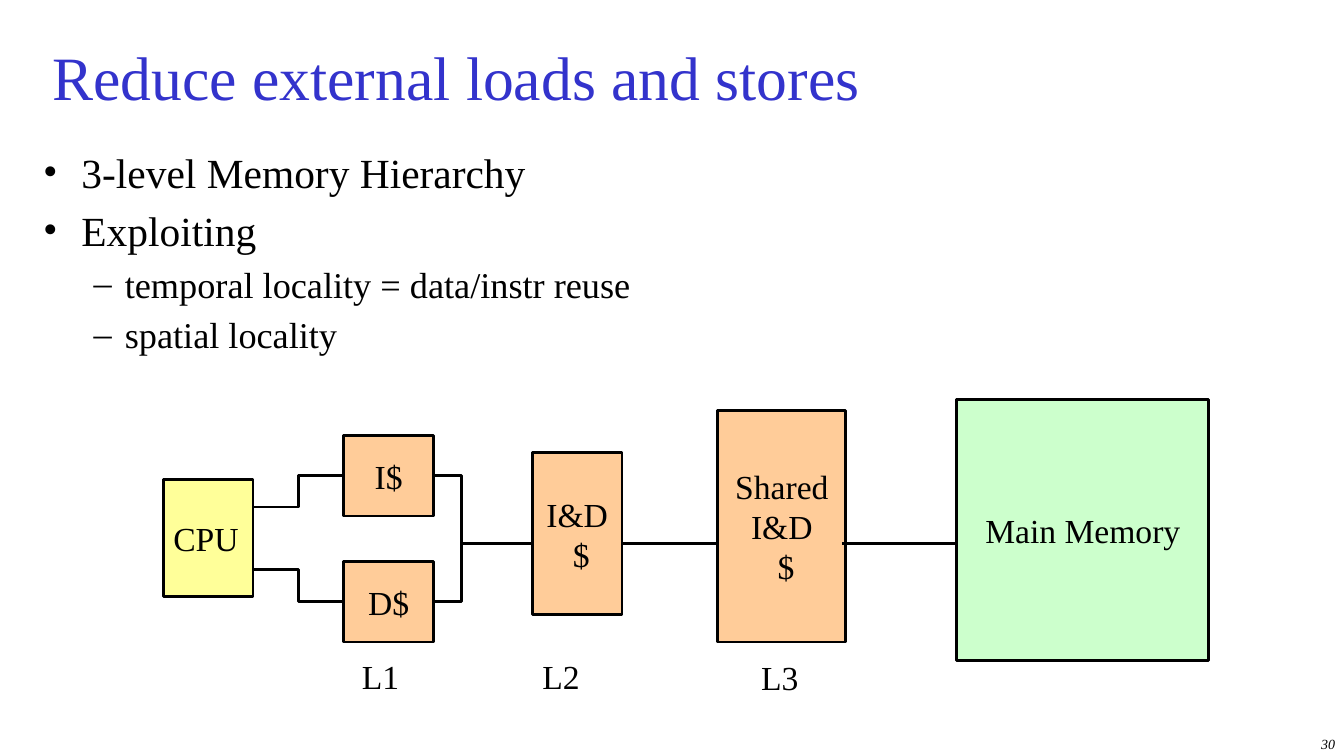
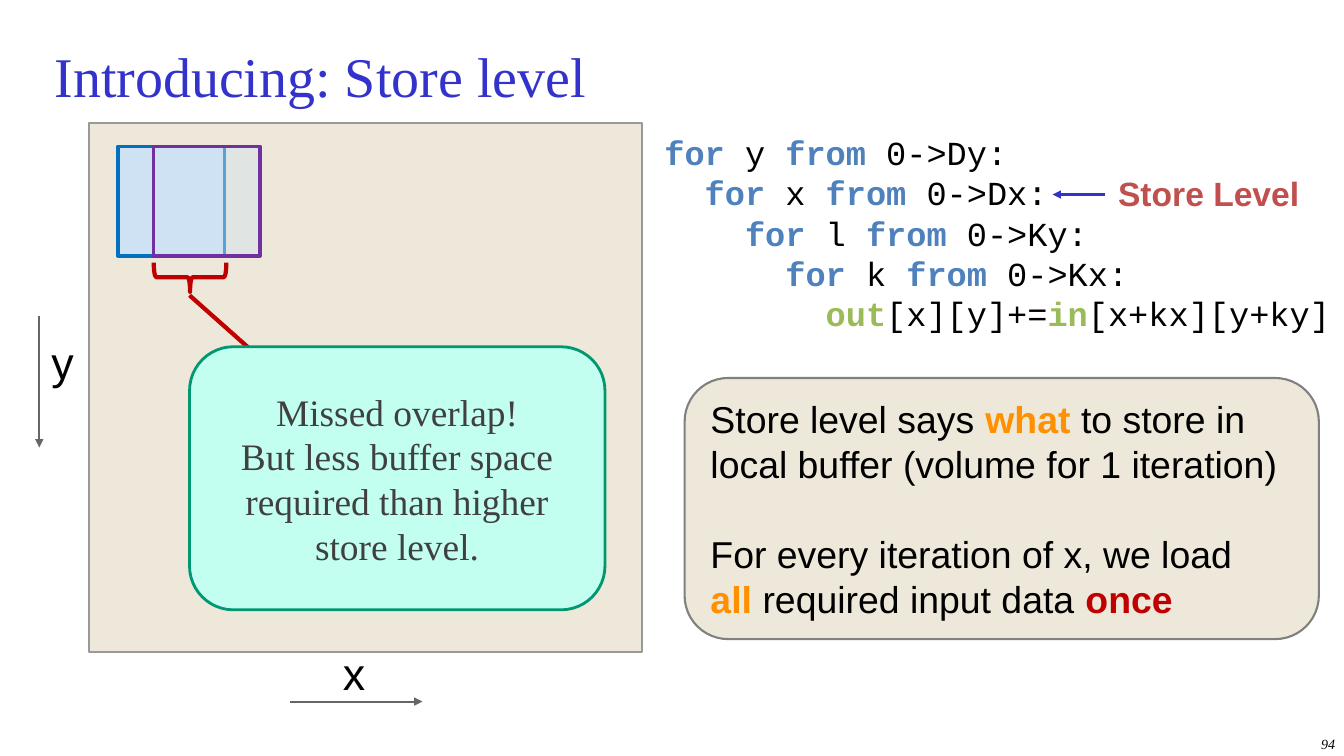
import pptx
import pptx.dml.color
import pptx.enum.shapes
import pptx.enum.text
import pptx.oxml.ns
import pptx.util
from lxml import etree

Inches = pptx.util.Inches
Pt = pptx.util.Pt
RGBColor = pptx.dml.color.RGBColor
SHAPE = pptx.enum.shapes.MSO_SHAPE
CONNECTOR = pptx.enum.shapes.MSO_CONNECTOR
ALIGN = pptx.enum.text.PP_ALIGN
ANCHOR = pptx.enum.text.MSO_ANCHOR
qn = pptx.oxml.ns.qn

BLACK = RGBColor(0x00, 0x00, 0x00)
DARK = RGBColor(0x40, 0x40, 0x40)
ARROW_GRAY = RGBColor(0x66, 0x66, 0x66)
GRAY = RGBColor(0x80, 0x80, 0x80)
LIGHT_GRAY = RGBColor(0x99, 0x99, 0x99)
TITLE_BLUE = RGBColor(0x33, 0x33, 0xCC)
YELLOW = RGBColor(0xFF, 0xFF, 0x99)
PEACH = RGBColor(0xFF, 0xCC, 0x99)
PALE_GREEN = RGBColor(0xCC, 0xFF, 0xCC)
BEIGE = RGBColor(0xEE, 0xE8, 0xDA)
PALE_BLUE = RGBColor(0xCF, 0xE2, 0xF3)
BLUE = RGBColor(0x00, 0x70, 0xC0)
PURPLE = RGBColor(0x70, 0x30, 0xA0)
MINT = RGBColor(0xC2, 0xFF, 0xF0)
TEAL = RGBColor(0x00, 0x97, 0x71)
RED = RGBColor(0xC0, 0x00, 0x00)
BRICK = RGBColor(0xC0, 0x50, 0x4D)
ORANGE = RGBColor(0xFF, 0x91, 0x00)
KEYWORD = RGBColor(0x4F, 0x81, 0xBD)
ARRAY = RGBColor(0x9B, 0xBB, 0x59)

SERIF, SANS, MONO = "Times New Roman", "Arial", "Courier New"
LEADING = 1.2


def write(sp, paras, size, font=SERIF, color=BLACK, align=ALIGN.LEFT,
          anchor=ANCHOR.TOP, wrap=True, inset=None):
    """Fill a shape with paragraphs of runs; a (text, accent colour) run is bold."""
    tf = sp.text_frame
    tf.auto_size = pptx.enum.text.MSO_AUTO_SIZE.NONE
    tf.word_wrap = wrap
    tf.vertical_anchor = anchor
    if inset is not None:
        tf.margin_left = tf.margin_right = Inches(inset)
        tf.margin_top = tf.margin_bottom = Inches(inset)
    for i, runs in enumerate(paras):
        p = tf.paragraphs[0] if i == 0 else tf.add_paragraph()
        p.alignment = align
        p.line_spacing = Pt(round(size * LEADING, 1))
        for run in runs:
            accented = isinstance(run, tuple)
            r = p.add_run()
            r.text = run[0] if accented else run
            r.font.name = font
            r.font.size = Pt(size)
            r.font.bold = accented
            r.font.color.rgb = run[1] if accented else color
    return tf


def add_box(s, kind, x, y, w, h, fill, line, weight):
    sp = s.shapes.add_shape(kind, Inches(x), Inches(y), Inches(w), Inches(h))
    sp.shadow.inherit = False
    if fill is None:
        sp.fill.background()
    else:
        sp.fill.solid()
        sp.fill.fore_color.rgb = fill
    sp.line.color.rgb = line
    sp.line.width = Pt(weight)
    return sp


prs = pptx.Presentation()
prs.slide_width, prs.slide_height = Inches(13.33), Inches(7.5)

# Titles and page numbers
slides = []
for title, size, inset, number in [
    ("Reduce external loads and stores", 44, None, "30"),
    ("Introducing: Store level", 40, 0.12, "94"),
]:
    s = prs.slides.add_slide(prs.slide_layouts[5])
    sp = s.shapes.title
    sp.left, sp.top = Inches(0.42), Inches(0.25)
    sp.width, sp.height = Inches(12.47), Inches(1)
    write(sp, [[title]], size, color=TITLE_BLUE, anchor=ANCHOR.MIDDLE, inset=inset)
    sp = s.shapes.add_textbox(Inches(10.56), Inches(7.25), Inches(2.78), Inches(0.25))
    tf = write(sp, [[number]], 10, align=ALIGN.RIGHT)
    tf.paragraphs[0].runs[0].font.italic = True
    slides.append(s)
hierarchy, store = slides

# Memory hierarchy: bullets
sp = hierarchy.shapes.add_textbox(Inches(0.33), Inches(1.41), Inches(12.37), Inches(1.97))
bullets = [
    (0, "3-level Memory Hierarchy"),
    (0, "Exploiting"),
    (1, "temporal locality = data/instr reuse"),
    (1, "spatial locality"),
]
levels = [("•", 29.6, 0.38, 0.38), ("–", 25.9, 0.81, 0.31)]
tf = write(sp, [[text] for level, text in bullets], levels[0][1])
for p, (level, text) in zip(tf.paragraphs, bullets):
    char, size, left, hang = levels[level]
    p.level = level
    p.runs[0].font.size = Pt(size)
    p.line_spacing = Pt(round(size * LEADING, 1))
    p.space_before = Pt(round(size * 0.2, 1))
    pPr = p._p.get_or_add_pPr()
    pPr.set("marL", str(Inches(left)))
    pPr.set("indent", str(-Inches(hang)))
    etree.SubElement(pPr, qn("a:buFont")).set("typeface", SERIF)
    etree.SubElement(pPr, qn("a:buChar")).set("char", char)

# Memory hierarchy: blocks and level labels
for x, y, w, h, fill, align, lines in [
    (1.62, 4.76, 0.89, 1.16, YELLOW, ALIGN.LEFT, ["CPU"]),
    (3.41, 4.32, 0.89, 0.8, PEACH, ALIGN.CENTER, ["I$"]),
    (3.41, 5.57, 0.89, 0.8, PEACH, ALIGN.CENTER, ["D$"]),
    (5.28, 4.49, 0.89, 1.61, PEACH, ALIGN.CENTER, ["I&D", " $"]),
    (7.12, 4.07, 1.27, 2.3, PEACH, ALIGN.CENTER, ["Shared", "I&D", " $"]),
    (9.49, 3.96, 2.5, 2.59, PALE_GREEN, ALIGN.CENTER, ["Main Memory"]),
]:
    sp = add_box(hierarchy, SHAPE.RECTANGLE, x, y, w, h, fill, BLACK, 2)
    write(sp, [[line] for line in lines], 24, align=align, anchor=ANCHOR.MIDDLE, wrap=False)

for x, y, text in [(3.49, 6.46, "L1"), (5.28, 6.46, "L2"), (7.45, 6.47, "L3")]:
    sp = hierarchy.shapes.add_textbox(Inches(x), Inches(y), Inches(0.58), Inches(0.5))
    write(sp, [[text]], 24, wrap=False)

# Bracket that joins the two L1 caches
fb = hierarchy.shapes.build_freeform(Inches(4.3), Inches(4.72))
fb.add_line_segments([(Inches(x), Inches(y)) for x, y in [(4.58, 4.72), (4.58, 5.97), (4.3, 5.97)]],
                     close=False)
sp = fb.convert_to_shape()
sp.shadow.inherit = False
sp.fill.background()
sp.line.color.rgb = BLACK
sp.line.width = Pt(2)

# Store level: image plane, overlapping tiles and brace
add_box(store, SHAPE.RECTANGLE, 0.88, 1.22, 5.49, 5.25, BEIGE, LIGHT_GRAY, 1.5)
add_box(store, SHAPE.RECTANGLE, 1.17, 1.45, 1.06, 1.09, PALE_BLUE, BLUE, 2.25)
next_tile = add_box(store, SHAPE.RECTANGLE, 1.52, 1.45, 1.06, 1.09, PALE_BLUE, PURPLE, 2.25)
clr = next_tile.fill._xPr.find(qn("a:solidFill")).find(qn("a:srgbClr"))
etree.SubElement(clr, qn("a:alpha")).set("val", "44000")
brace = add_box(store, SHAPE.RIGHT_BRACE, 1.74, 2.39, 0.29, 0.72, None, RED, 3)
brace.rotation = 90
brace.adjustments[0] = 0.08

# Lines and arrows of both slides
for s, kind, x1, y1, x2, y2, color, weight, arrow in [
    (hierarchy, CONNECTOR.ELBOW, 2.51, 5.03, 3.41, 4.72, BLACK, 2, False),
    (hierarchy, CONNECTOR.ELBOW, 2.51, 5.65, 3.41, 5.97, BLACK, 2, False),
    (hierarchy, CONNECTOR.STRAIGHT, 4.58, 5.39, 5.28, 5.39, BLACK, 2, False),
    (hierarchy, CONNECTOR.STRAIGHT, 6.17, 5.39, 7.12, 5.39, BLACK, 2, False),
    (hierarchy, CONNECTOR.STRAIGHT, 8.35, 5.39, 9.49, 5.39, BLACK, 2, False),
    (store, CONNECTOR.STRAIGHT, 10.96, 1.93, 10.44, 1.93, TITLE_BLUE, 1.5, True),
    (store, CONNECTOR.STRAIGHT, 2.88, 6.96, 4.19, 6.96, ARROW_GRAY, 1.5, True),
    (store, CONNECTOR.STRAIGHT, 0.39, 3.14, 0.39, 4.44, ARROW_GRAY, 1.5, True),
    (store, CONNECTOR.STRAIGHT, 1.88, 2.93, 2.51, 3.49, RED, 3, False),
]:
    cn = s.shapes.add_connector(kind, Inches(x1), Inches(y1), Inches(x2), Inches(y2))
    cn.line.color.rgb = color
    cn.line.width = Pt(weight)
    if arrow:
        etree.SubElement(cn.line._get_or_add_ln(), qn("a:tailEnd")).set("type", "triangle")
    etree.SubElement(cn._element.spPr, qn("a:effectLst"))

# Store level: loop nest
sp = store.shapes.add_textbox(Inches(6.46), Inches(1.18), Inches(6.87), Inches(2.74))
code = [[("for", KEYWORD), f" {var} ", ("from ", KEYWORD), f"0->{bound}:"]
        for var, bound in [("y", "Dy"), ("x", "Dx"), ("l", "Ky"), ("k", "Kx")]]
code.append([("out", ARRAY), "[x][y]+=", ("in", ARRAY), "[x+kx][y+ky]"])
tf = write(sp, code, 24, MONO, wrap=False, inset=0.13)
for depth, p in enumerate(tf.paragraphs):
    p._p.get_or_add_pPr().set("marL", str(Inches(0.4 * depth)))

# Store level: axis and arrow labels
for x, y, w, h, run, size in [
    (10.96, 1.59, 2.2, 0.74, ("Store Level", BRICK), 24),
    (3.27, 6.28, 1.63, 0.6, "x", 32),
    (0.38, 3.19, 1.63, 0.6, "y", 32),
]:
    sp = store.shapes.add_textbox(Inches(x), Inches(y), Inches(w), Inches(h))
    write(sp, [[run]], size, SANS, inset=0.13)

# Store level: explanation and callout
sp = add_box(store, SHAPE.ROUNDED_RECTANGLE, 6.79, 3.75, 6.29, 2.59, BEIGE, GRAY, 1.5)
tf = write(sp, [
    ["Store level says ", ("what", ORANGE),
     " to store in local buffer (volume for 1 iteration)"],
    ["For every iteration of x, we load"],
    [("all ", ORANGE), "required input data ", ("once", RED)],
], 26.7, SANS, anchor=ANCHOR.MIDDLE, inset=0.13)
tf.paragraphs[1].space_before = Pt(32)

sp = add_box(store, SHAPE.ROUNDED_RECTANGLE, 1.88, 3.44, 4.12, 2.61, MINT, TEAL, 2)
write(sp, [
    ["Missed overlap!"],
    ["But less buffer space required than higher store level."],
], 26.7, color=DARK, align=ALIGN.CENTER, anchor=ANCHOR.MIDDLE)

prs.save("out.pptx")
